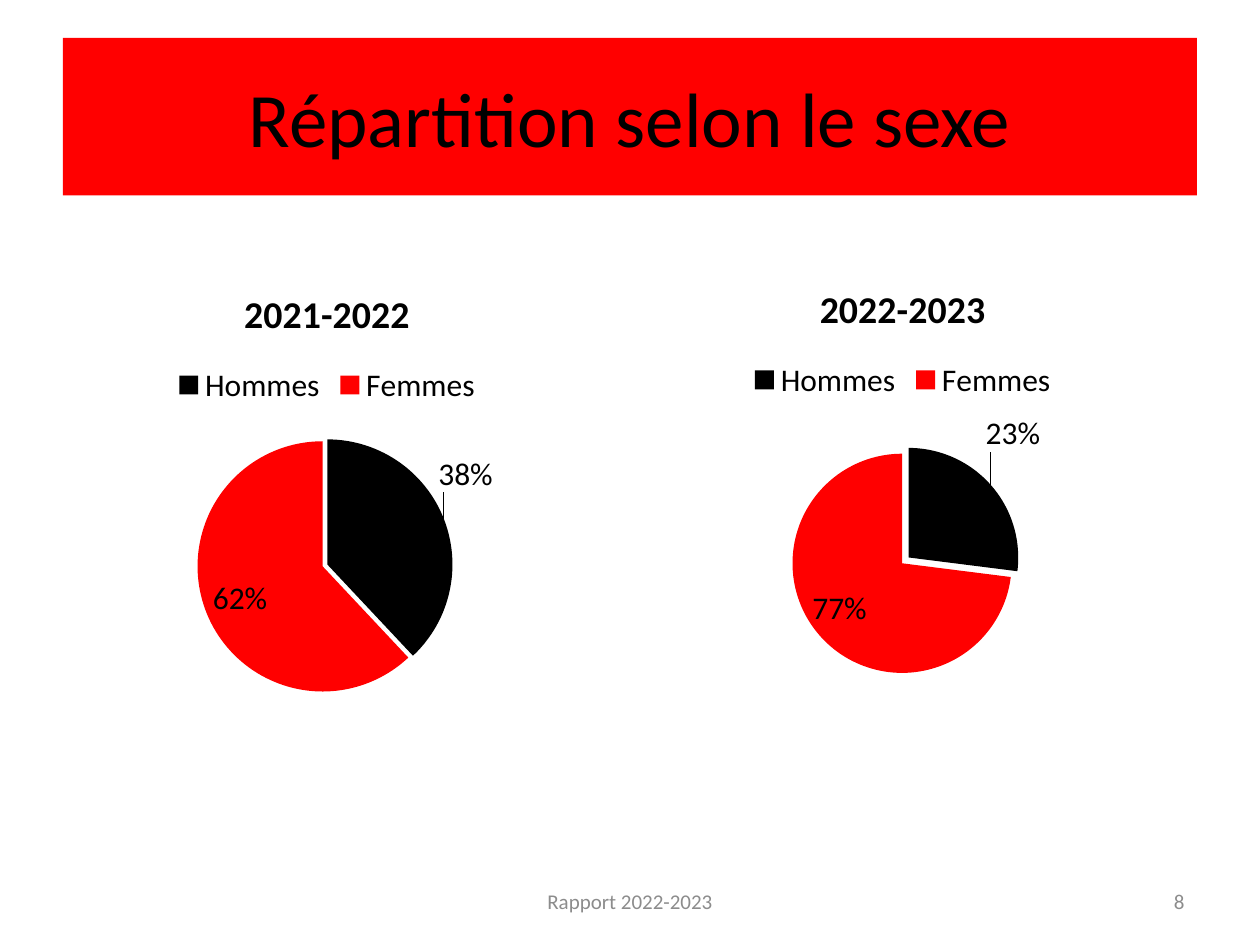
from dataclasses import dataclass

from lxml import etree
from pptx import Presentation
from pptx.chart.data import CategoryChartData
from pptx.dml.color import RGBColor
from pptx.enum.chart import XL_CHART_TYPE, XL_LABEL_POSITION, XL_LEGEND_POSITION
from pptx.enum.shapes import MSO_SHAPE
from pptx.enum.text import MSO_ANCHOR, PP_ALIGN
from pptx.oxml.ns import qn
from pptx.util import Pt

PIE = XL_CHART_TYPE.PIE
LEGEND_TOP = XL_LEGEND_POSITION.TOP
LABEL_POSITIONS = (XL_LABEL_POSITION.OUTSIDE_END, XL_LABEL_POSITION.CENTER)
RECTANGLE = MSO_SHAPE.RECTANGLE
MIDDLE = MSO_ANCHOR.MIDDLE
CENTER, RIGHT = PP_ALIGN.CENTER, PP_ALIGN.RIGHT


@dataclass(frozen=True)
class Theme:
    font: str = "Calibri"
    black: RGBColor = RGBColor(0, 0, 0)
    red: RGBColor = RGBColor(255, 0, 0)
    grey: RGBColor = RGBColor(0x8C, 0x8C, 0x8C)
    title_size: Pt = Pt(44)
    chart_title_size: Pt = Pt(21.6)
    chart_size: Pt = Pt(18)
    footer_size: Pt = Pt(12)


theme = Theme()


def add_text(text_frame, text, size, color, alignment=None, bold=False):
    paragraph = text_frame.paragraphs[0]
    paragraph.alignment = alignment
    run = paragraph.add_run()
    run.text = text
    run.font.name = theme.font
    run.font.size = size
    run.font.bold = bold
    run.font.color.rgb = color


def manual_layout(**settings):
    """Return a c:layout element; settings are its children in schema order."""
    layout = etree.Element(qn("c:layout"))
    manual = etree.SubElement(layout, qn("c:manualLayout"))
    for name, value in settings.items():
        etree.SubElement(manual, qn(f"c:{name}")).set("val", str(value))
    return layout


presentation = Presentation()
presentation.slide_width, presentation.slide_height = Pt(720), Pt(540)
slide = presentation.slides.add_slide(presentation.slide_layouts[6])

# Title band
band = slide.shapes.add_shape(RECTANGLE, Pt(36), Pt(21.6), Pt(648), Pt(90))
band.shadow.inherit = False
band.fill.solid()
band.fill.fore_color.rgb = theme.red
band.line.fill.background()
band.text_frame.vertical_anchor = MIDDLE
add_text(band.text_frame, "Répartition selon le sexe", theme.title_size, theme.black, CENTER)

# Pies: title, values, written labels, frame, plot area, label offsets, explosion
pies = [
    ("2022-2023", (27, 73), ("23%", "77%"), (362.9, 148.3, 306, 260.6),
     (0.29, 0.41, 0.43, 0.5), ((-0.02, -0.06), (-0.04, 0.02)), 4),
    ("2021-2022", (38, 62), None, (70.6, 151.2, 232.6, 260.6),
     (0.18, 0.38, 0.63, 0.56), ((-0.03, -0.05), (-0.06, 0.02)), 2),
]
for title, values, written_labels, frame, plot_area, offsets, explosion in pies:
    data = CategoryChartData()
    data.categories = ["Hommes", "Femmes"]
    data.add_series(title, values)
    chart = slide.shapes.add_chart(PIE, *map(Pt, frame), data).chart
    chart.font.name = theme.font
    chart.font.size = theme.chart_size
    chart.font.color.rgb = theme.black
    chart.has_title = True
    add_text(chart.chart_title.text_frame, title, theme.chart_title_size, theme.black, bold=True)
    chart.has_legend = True
    chart.legend.position = LEGEND_TOP
    chart.legend.include_in_layout = False

    plot = chart.plots[0]
    plot.vary_by_categories = True
    plot_element = chart.element.find(".//" + qn("c:plotArea"))
    for old_layout in plot_element.findall(qn("c:layout")):
        plot_element.remove(old_layout)
    x, y, width, height = plot_area
    plot_element.insert(0, manual_layout(
        layoutTarget="inner", xMode="edge", yMode="edge", x=x, y=y, w=width, h=height))

    series = plot.series[0]
    explosion_element = etree.Element(qn("c:explosion"))
    explosion_element.set("val", str(explosion))
    chart.element.find(".//" + qn("c:ser")).find(qn("c:tx")).addnext(explosion_element)

    labels = series.data_labels
    labels.show_percentage = True
    labels.show_value = False
    labels.number_format = "0%"
    labels.number_format_is_linked = False
    for index, color in enumerate((theme.black, theme.red)):
        point = series.points[index]
        point.format.fill.solid()
        point.format.fill.fore_color.rgb = color
        label = point.data_label
        if written_labels:
            add_text(label.text_frame, written_labels[index], theme.chart_size, theme.black)
        label.position = LABEL_POSITIONS[index]

    for label_element, (x, y) in zip(chart.element.iter(qn("c:dLbl")), offsets):
        label_element.find(qn("c:idx")).addnext(manual_layout(x=x, y=y))
        label_element.find(qn("c:showVal")).set("val", "0")
        label_element.find(qn("c:showPercent")).set("val", "1")
    for leader_lines in chart.element.iter(qn("c:showLeaderLines")):
        leader_lines.set("val", "1")

# Footer and slide number
for text, left, width, alignment in (
    ("Rapport 2022-2023", 246, 228, CENTER),
    ("8", 516, 168, RIGHT),
):
    box = slide.shapes.add_textbox(Pt(left), Pt(500.5), Pt(width), Pt(28.75))
    box.text_frame.word_wrap = True
    box.text_frame.vertical_anchor = MIDDLE
    add_text(box.text_frame, text, theme.footer_size, theme.grey, alignment)

presentation.save("out.pptx")
